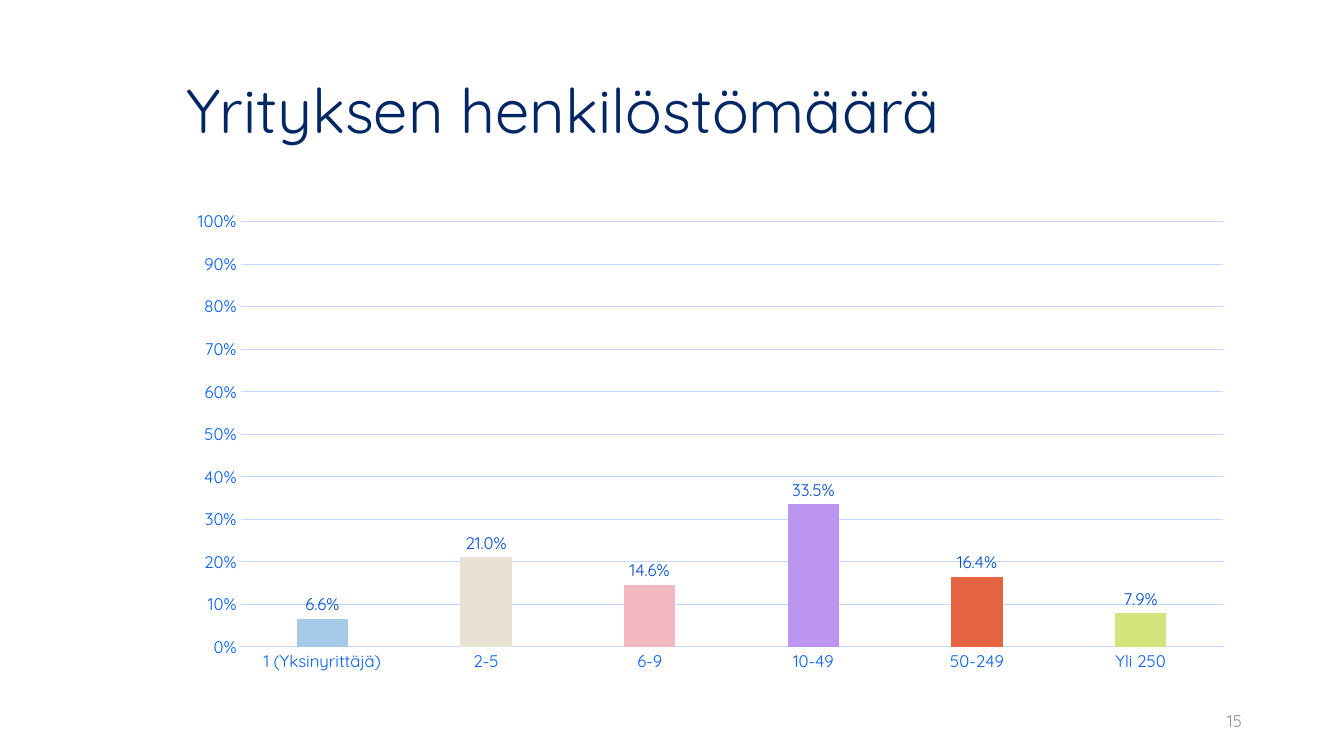
from pptx import Presentation
from pptx.chart.data import CategoryChartData
from pptx.dml.color import RGBColor
from pptx.enum.chart import XL_CHART_TYPE, XL_LABEL_POSITION, XL_TICK_MARK
from pptx.enum.text import MSO_ANCHOR, PP_ALIGN
from pptx.util import Cm, Pt

COLUMNS = XL_CHART_TYPE.COLUMN_CLUSTERED
OUTSIDE_END = XL_LABEL_POSITION.OUTSIDE_END
NO_TICKS = XL_TICK_MARK.NONE
MIDDLE = MSO_ANCHOR.MIDDLE
LEFT, RIGHT = PP_ALIGN.LEFT, PP_ALIGN.RIGHT

FONT = "Quicksand"
NAVY = RGBColor(0x00, 0x26, 0x63)
BLUE = RGBColor(0x00, 0x5D, 0xF3)
LABEL_BLUE = RGBColor(0x00, 0x4D, 0xCA)
PALE_BLUE = RGBColor(0xC1, 0xD9, 0xFF)
GREY = RGBColor(0x8C, 0x8E, 0x9F)

# Category, share of answers, column colour
STAFF_SIZES = [
    ("1 (Yksinyrittäjä)", 0.066, RGBColor(0xA5, 0xC9, 0xE7)),
    ("2-5", 0.21, RGBColor(0xE8, 0xE2, 0xD5)),
    ("6-9", 0.146, RGBColor(0xF2, 0xB7, 0xBF)),
    ("10-49", 0.335, RGBColor(0xBB, 0x95, 0xEF)),
    ("50-249", 0.164, RGBColor(0xE6, 0x63, 0x42)),
    ("Yli 250", 0.079, RGBColor(0xD1, 0xE5, 0x7C)),
]
CONTENT_LEFT, CONTENT_WIDTH = Cm(4.45), Cm(26.9)


def style_font(font, size, color):
    font.name = FONT
    font.size = Pt(size)
    font.bold = False
    font.color.rgb = color


def fill_text(box, text, size, color, alignment):
    frame = box.text_frame
    frame.word_wrap = True
    frame.vertical_anchor = MIDDLE
    para = frame.paragraphs[0]
    para.text = text
    para.alignment = alignment
    style_font(para.font, size, color)
    return para


deck = Presentation()
deck.slide_width, deck.slide_height = Cm(33.87), Cm(19.05)
page = deck.slides.add_slide(deck.slide_layouts[5])

# Title
title = page.shapes.title
title.left, title.top = CONTENT_LEFT, Cm(1.02)
title.width, title.height = CONTENT_WIDTH, Cm(3.68)
fill_text(title, "Yrityksen henkilöstömäärä", 44, NAVY, LEFT).line_spacing = 0.9

# Page number
number = page.shapes.add_textbox(Cm(23.93), Cm(17.65), Cm(7.62), Cm(1.02))
fill_text(number, "15", 12, GREY, RIGHT)

# Column chart
data = CategoryChartData()
data.categories = [name for name, share, color in STAFF_SIZES]
data.add_series("Series 1", [share for name, share, color in STAFF_SIZES])
chart = page.shapes.add_chart(
    COLUMNS, CONTENT_LEFT, Cm(5.08), CONTENT_WIDTH, Cm(12.09), data
).chart
chart.has_legend = False
chart.has_title = False
style_font(chart.font, 10, NAVY)

# Axes
for axis in (chart.category_axis, chart.value_axis):
    axis.major_tick_mark = axis.minor_tick_mark = NO_TICKS
    style_font(axis.tick_labels.font, 12, BLUE)

shares = chart.value_axis
shares.minimum_scale, shares.maximum_scale, shares.major_unit = 0, 1, 0.1
shares.tick_labels.number_format = "0%"
shares.tick_labels.number_format_is_linked = False
shares.format.line.fill.background()

for line in (chart.category_axis.format.line, shares.major_gridlines.format.line):
    line.color.rgb = PALE_BLUE
    line.width = Pt(0.75)

# Columns and their labels
plot = chart.plots[0]
plot.gap_width, plot.overlap = 219, -27
plot.vary_by_categories = False
series = plot.series[0]
for index, (name, share, color) in enumerate(STAFF_SIZES):
    fill = series.points[index].format.fill
    fill.solid()
    fill.fore_color.rgb = color

labels = series.data_labels
labels.show_value = True
labels.number_format = "0.0%"
labels.number_format_is_linked = False
labels.position = OUTSIDE_END
style_font(labels.font, 12, LABEL_BLUE)

deck.save("out.pptx")
